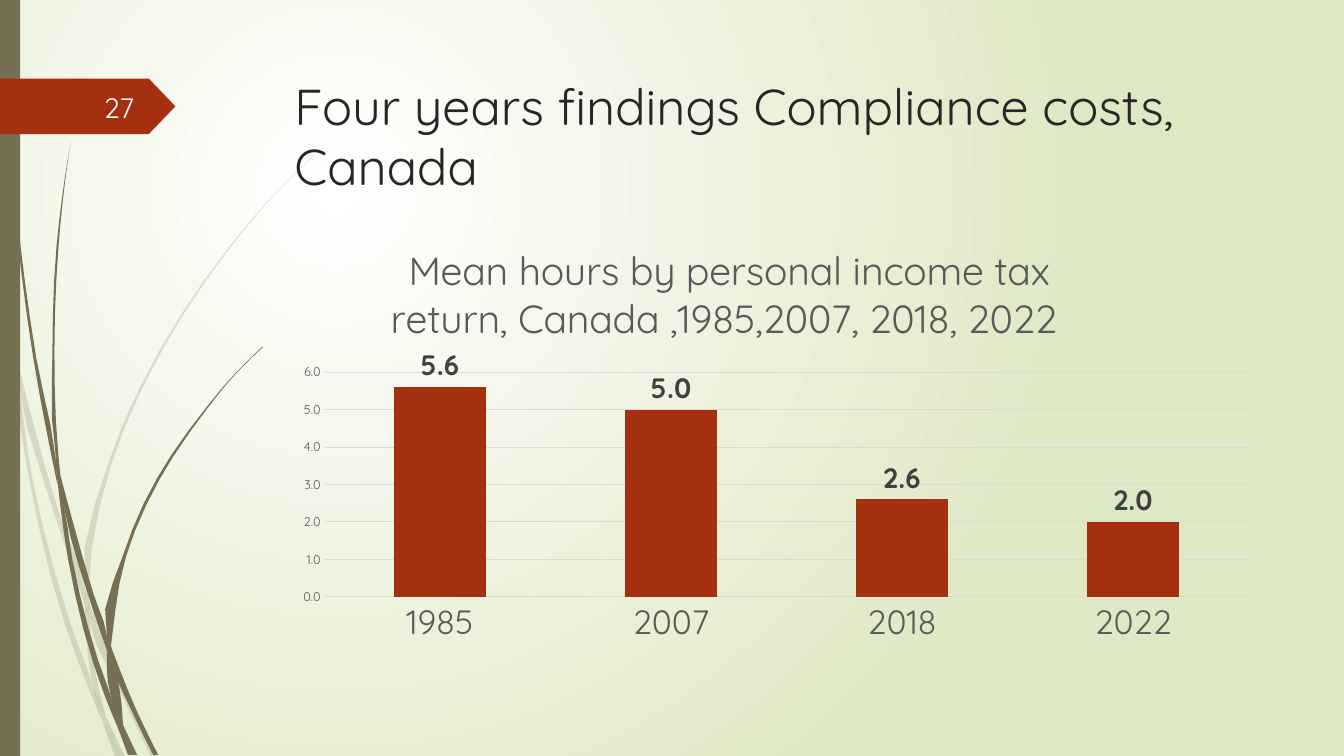
"""Build the slide on four years of compliance cost findings in Canada."""
import pptx
import pptx.chart.data
import pptx.dml.color
import pptx.enum.chart
import pptx.enum.shapes
import pptx.enum.text
import pptx.oxml
import pptx.oxml.ns
import pptx.util

TITLE = "Four years findings Compliance costs, Canada"
CHART_TITLE = " Mean hours by personal income tax return, Canada ,1985,2007, 2018, 2022"
PAGE_NUMBER = "27"
MEAN_HOURS = {"1985": 5.6, "2007": 5.0, "2018": 2.6, "2022": 2.0}
FONT = "Quicksand"
COLOURS = {
    "white": "FFFFFF", "pale": "DFE8C4", "grass": "766F54", "rust": "A53010",
    "title": "262626", "label": "404040", "axis": "595959", "grid": "D9D9D9",
    "number": "FEFFFF",
}
PLOT_PLACE = {"x": 0.04, "y": 0.33, "w": 0.94, "h": 0.54}
TITLE_PLACE = {"x": 0.1, "y": 0}

FAINT_BLADES = [
    ([(0, 2.82), (0, 2.99), (0.1, 3.44), (0.11, 3.5)], [(0, 2.82), (0.09, 3.22), (0.11, 3.5)]),
    ([(0.14, 3.45), (0.17, 3.76), (0.58, 5.22), (0.84, 5.99)],
     [(0.14, 3.45), (0.62, 5.2), (0.85, 5.86), (0.84, 5.99)]),
    ([(0.88, 5.96), (0.88, 6.1), (1.23, 6.94), (1.5, 7.51)],
     [(0.88, 5.96), (0.92, 6.07), (1.27, 6.92), (1.55, 7.51)]),
    ([(1.05, 7.11), (1.19, 7.51)], [(1.05, 7.11), (1.24, 7.51)]),
    ([(0.11, 3.5), (0.28, 4.7), (0.65, 6.21), (0.92, 6.93), (1.01, 7.14)],
     [(0.11, 3.5), (0.17, 3.76), (0.31, 4.69), (0.7, 6.19), (0.93, 6.83), (1.01, 7.14)]),
    ([(0.84, 5.99), (0.87, 6.46), (0.93, 6.83), (1.05, 7.11)],
     [(0.84, 5.99), (0.88, 6.1), (0.91, 6.46), (1.05, 7.11)]),
    ([(3.12, 1.53), (2.68, 1.97), (2.28, 2.44), (1.58, 3.48), (1.07, 4.61), (0.85, 5.84),
      (0.88, 5.96)],
     [(3.12, 1.54), (2.68, 1.98), (2.29, 2.45), (1.6, 3.49), (1.1, 4.62), (0.88, 5.84),
      (0.88, 5.96)]),
    ([(1.01, 7.14), (1.14, 7.51)], [(1.01, 7.14), (1.19, 7.51)]),
    ([(0.85, 5.86), (0.84, 5.99), (0.88, 6.1)], [(0.85, 5.86), (0.88, 5.96), (0.88, 6.1)]),
    ([(0.93, 6.83), (0.99, 7.07), (1.19, 7.51)], [(0.93, 6.83), (1.05, 7.11), (1.19, 7.51)]),
]
SOLID_BLADES = [
    ([(0.03, 0), (0.04, 0.48), (0.07, 1.1), (0.17, 2.33), (0.33, 3.55), (0.57, 4.81)],
     [(0.04, 0), (0.05, 0.48), (0.08, 1.09), (0.19, 2.32), (0.36, 3.55), (0.55, 4.53),
      (0.57, 4.81)]),
    ([(0.6, 4.72), (0.64, 5.05), (0.88, 5.92), (1.06, 6.45)],
     [(0.6, 4.72), (0.93, 5.9), (1.06, 6.31), (1.06, 6.45)]),
    ([(1.1, 6.41), (1.11, 6.56), (1.32, 7.08), (1.52, 7.49)],
     [(1.1, 6.41), (1.13, 6.49), (1.36, 7.06), (1.57, 7.49)]),
    ([(0.57, 4.77), (0.68, 5.57), (0.93, 6.59), (1.11, 7.08), (1.17, 7.22)],
     [(0.57, 4.77), (0.64, 5.05), (0.72, 5.56), (0.98, 6.57), (1.1, 6.91), (1.17, 7.22)]),
    ([(0.7, 1.41), (0.62, 1.93), (0.56, 2.45), (0.52, 3.49), (0.55, 4.49), (0.6, 4.72)],
     [(0.7, 1.41), (0.63, 1.93), (0.58, 2.45), (0.54, 3.49), (0.58, 4.53), (0.6, 4.72)]),
    ([(1.22, 7.19), (1.33, 7.49)], [(1.22, 7.19), (1.36, 7.49)]),
    ([(0.55, 4.49), (0.57, 4.77), (0.64, 5.05)], [(0.55, 4.49), (0.6, 4.72), (0.64, 5.05)]),
    ([(2.6, 3.44), (2.31, 3.73), (2.04, 4.05), (1.56, 4.74), (1.22, 5.51), (1.06, 6.31),
      (1.1, 6.41)],
     [(2.61, 3.44), (2.31, 3.74), (2.05, 4.06), (1.58, 4.76), (1.25, 5.52), (1.11, 6.33),
      (1.1, 6.41)]),
    ([(1.17, 7.22), (1.27, 7.49)], [(1.17, 7.22), (1.31, 7.49)]),
    ([(1.06, 6.45), (1.1, 6.91), (1.22, 7.19)], [(1.06, 6.45), (1.11, 6.56), (1.22, 7.19)]),
    ([(1.06, 6.31), (1.06, 6.45), (1.11, 6.56)], [(1.06, 6.31), (1.1, 6.41), (1.11, 6.56)]),
    ([(1.1, 6.91), (1.17, 7.22), (1.3, 7.49)], [(1.1, 6.91), (1.22, 7.19), (1.33, 7.49)]),
]


def box(*inches):
    return [pptx.util.Cm(value * 2.54) for value in inches]


def colour(name):
    return pptx.dml.color.RGBColor.from_string(COLOURS[name])


def style(font, size, name, bold=False):
    font.name, font.size, font.bold = FONT, pptx.util.Pt(size), bold
    font.color.rgb = colour(name)


def paint(shape, name):
    shape.shadow.inherit = False
    shape.fill.solid()
    shape.fill.fore_color.rgb = colour(name)
    shape.line.fill.background()


def smooth_edge(knots, steps=3):
    if len(knots) == 2:
        return knots
    heights = [b[1] - a[1] for a, b in zip(knots, knots[1:])]
    chords = [(b[0] - a[0]) / (b[1] - a[1]) for a, b in zip(knots, knots[1:])]
    inner = [(chords[i] * heights[i + 1] + chords[i + 1] * heights[i])
             / (heights[i] + heights[i + 1]) for i in range(len(chords) - 1)]
    slopes = [1.5 * chords[0] - inner[0] / 2, *inner, 1.5 * chords[-1] - inner[-1] / 2]
    points = [knots[0]]
    for i, height in enumerate(heights):
        (x0, y0), (x1, _) = knots[i], knots[i + 1]
        for step in range(1, steps + 1):
            t = step / steps
            bend = slopes[i] * t * (1 - t) ** 2 - slopes[i + 1] * t * t * (1 - t)
            x = x0 + (x1 - x0) * t * t * (3 - 2 * t) + height * bend
            points.append((x, y0 + height * t))
    return points


def add_blade(slide, left_edge, right_edge, opacity):
    outline = smooth_edge(left_edge) + smooth_edge(right_edge)[::-1]
    points = [box(*point) for point in outline]
    builder = slide.shapes.build_freeform(*points[0])
    builder.add_line_segments(points[1:], close=True)
    blade = builder.convert_to_shape()
    paint(blade, "grass")
    if opacity < 100:
        solid = blade.element.spPr.find(pptx.oxml.ns.qn("a:solidFill"))
        alpha = solid[0].makeelement(pptx.oxml.ns.qn("a:alpha"), {"val": str(opacity * 1000)})
        solid[0].append(alpha)


def set_background(slide):
    fill = slide.background.fill
    fill.gradient()
    for stop, position, name in zip(fill.gradient_stops, (0, 1), ("white", "pale")):
        stop.position = position
        stop.color.rgb = colour(name)
    linear = next(slide.element.iter(pptx.oxml.ns.qn("a:lin")))
    radial = pptx.oxml.parse_xml(
        f'<a:path {pptx.oxml.ns.nsdecls("a")} path="circle">'
        '<a:fillToRect l="50000" t="50000" r="100000" b="100000"/></a:path>')
    linear.getparent().replace(linear, radial)


def add_decoration(slide):
    for blades, opacity in ((FAINT_BLADES, 20), (SOLID_BLADES, 100)):
        for left_edge, right_edge in blades:
            add_blade(slide, left_edge, right_edge, opacity)
    kinds = pptx.enum.shapes.MSO_SHAPE
    paint(slide.shapes.add_shape(kinds.RECTANGLE, *box(0, 0, 0.2, 7.5)), "grass")
    tag = slide.shapes.add_shape(kinds.PENTAGON, *box(0, 0.78, 1.74, 0.55))
    tag.adjustments[0] = 0.48
    paint(tag, "rust")


def write(shape, text, size, name, anchor, alignment):
    frame = shape.text_frame
    frame.word_wrap = True
    frame.text = text
    frame.vertical_anchor = anchor
    frame.paragraphs[0].alignment = alignment
    style(frame.paragraphs[0].runs[0].font, size, name)


def place(parent, spots, target=""):
    entries = "".join(f'<c:{key} val="{value}"/>' for key, value in spots.items())
    layout = pptx.oxml.parse_xml(
        f'<c:layout {pptx.oxml.ns.nsdecls("c")}><c:manualLayout>{target}'
        f'<c:xMode val="edge"/><c:yMode val="edge"/>{entries}</c:manualLayout></c:layout>')
    for old_layout in parent.findall(pptx.oxml.ns.qn("c:layout")):
        parent.remove(old_layout)
    text = parent.find(pptx.oxml.ns.qn("c:tx"))
    parent.insert(0 if text is None else 1, layout)


def add_hours_chart(slide):
    enums = pptx.enum.chart
    data = pptx.chart.data.CategoryChartData(number_format="0.0")
    data.categories = list(MEAN_HOURS)
    data.add_series("Series 1", list(MEAN_HOURS.values()))
    chart = slide.shapes.add_chart(
        enums.XL_CHART_TYPE.COLUMN_CLUSTERED, *box(2.83, 2.33, 9.75, 4.13), data).chart
    style(chart.font, 10, "axis")
    chart.has_legend = False
    chart.chart_title.text_frame.text = CHART_TITLE
    style(chart.chart_title.text_frame.paragraphs[0].runs[0].font, 28, "axis")
    categories, hours = chart.category_axis, chart.value_axis
    for axis, size in ((categories, 24), (hours, 9)):
        axis.major_tick_mark = axis.minor_tick_mark = enums.XL_TICK_MARK.NONE
        style(axis.tick_labels.font, size, "axis")
    hours.minimum_scale, hours.maximum_scale, hours.major_unit = 0, 6, 1
    hours.tick_labels.number_format = "0.0"
    hours.tick_labels.number_format_is_linked = False
    hours.format.line.fill.background()
    for line in (categories.format.line, hours.major_gridlines.format.line):
        line.color.rgb = colour("grid")
        line.width = pptx.util.Pt(0.75)
    plot = chart.plots[0]
    plot.gap_width, plot.vary_by_categories = 150, False
    plot.series[0].format.fill.solid()
    plot.series[0].format.fill.fore_color.rgb = colour("rust")
    plot.has_data_labels = True
    plot.data_labels.show_value = True
    plot.data_labels.position = enums.XL_LABEL_POSITION.OUTSIDE_END
    style(plot.data_labels.font, 20, "label", bold=True)
    area = next(chart.element.iter(pptx.oxml.ns.qn("c:plotArea")))
    place(area, PLOT_PLACE, '<c:layoutTarget val="inner"/>')
    place(next(chart.element.iter(pptx.oxml.ns.qn("c:title"))), TITLE_PLACE)


def main():
    anchors, alignments = pptx.enum.text.MSO_ANCHOR, pptx.enum.text.PP_ALIGN
    presentation = pptx.Presentation()
    presentation.slide_width, presentation.slide_height = box(13.33, 7.5)
    slide = presentation.slides.add_slide(presentation.slide_layouts[5])
    set_background(slide)
    add_decoration(slide)
    title = slide.shapes.title
    title.left, title.top, title.width, title.height = box(2.82, 0.69, 9.75, 1.4)
    write(title, TITLE, 36, "title", anchors.TOP, alignments.LEFT)
    add_hours_chart(slide)
    number = slide.shapes.add_textbox(*box(0.58, 0.86, 0.85, 0.4))
    write(number, PAGE_NUMBER, 20, "number", anchors.MIDDLE, alignments.RIGHT)
    presentation.save("out.pptx")


if __name__ == "__main__":
    main()
